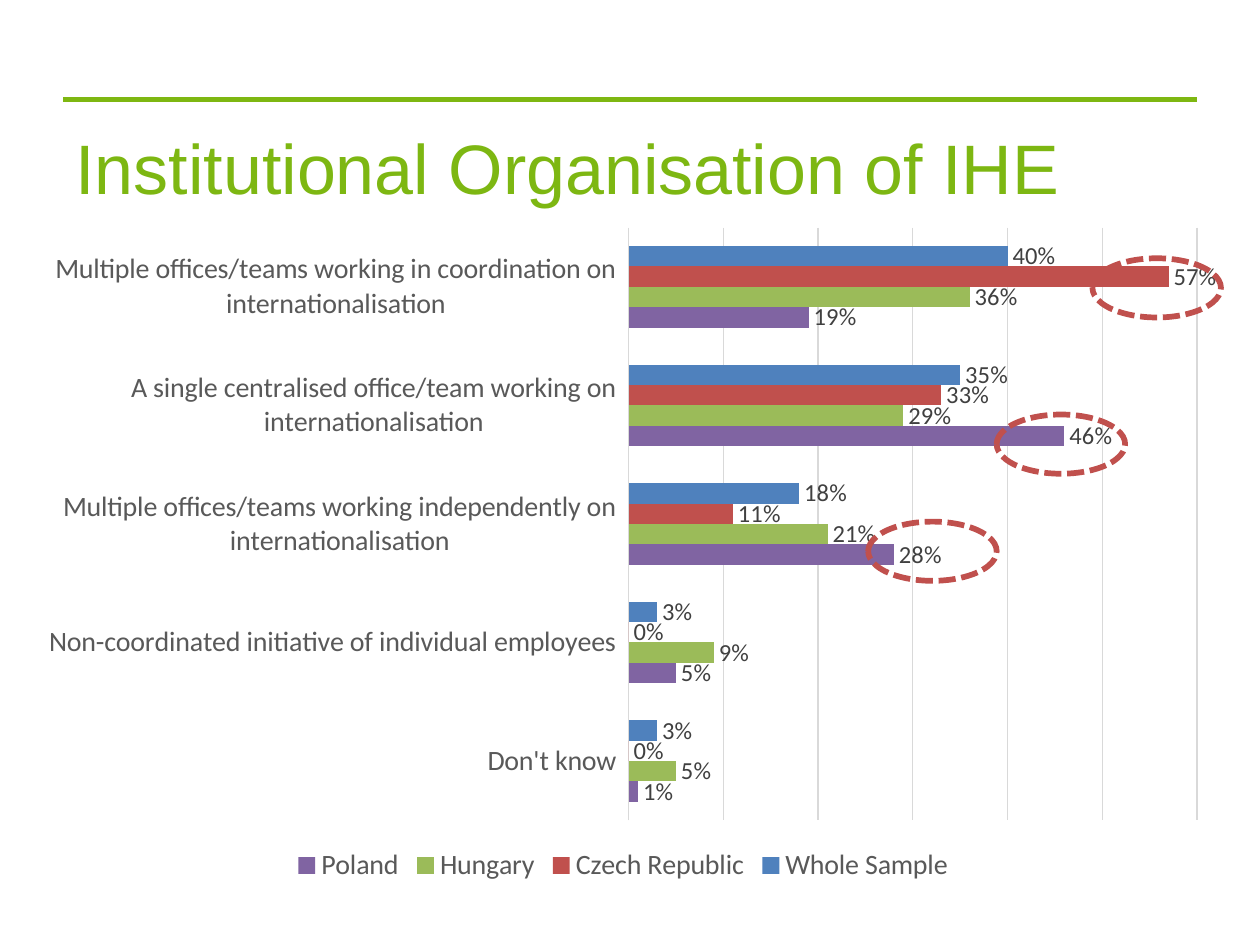
from dataclasses import dataclass

from pptx import Presentation
from pptx.chart.data import CategoryChartData
from pptx.dml.color import RGBColor
from pptx.enum.chart import XL_CHART_TYPE as ChartType
from pptx.enum.chart import XL_LABEL_POSITION as LabelPos
from pptx.enum.chart import XL_LEGEND_POSITION as LegendPos
from pptx.enum.chart import XL_TICK_LABEL_POSITION as TickLabelPos
from pptx.enum.chart import XL_TICK_MARK as TickMark
from pptx.enum.dml import MSO_LINE_DASH_STYLE as Dash
from pptx.enum.shapes import MSO_CONNECTOR as Connector
from pptx.enum.shapes import MSO_SHAPE as Shape
from pptx.enum.text import MSO_ANCHOR as Anchor
from pptx.enum.text import MSO_AUTO_SIZE as AutoSize
from pptx.enum.text import PP_ALIGN as Align
from pptx.oxml import parse_xml
from pptx.oxml.ns import nsdecls
from pptx.util import Inches, Pt


@dataclass(frozen=True)
class Theme:
    title_font: str = "Arial"
    chart_font: str = "Calibri"
    title_size: int = 40
    axis_size: int = 16
    label_size: int = 14
    base_size: int = 10
    rule: str = "7EB711"
    title: str = "7DB712"
    axis_text: str = "595959"
    label_text: str = "404040"
    base_text: str = "000000"
    grid: str = "D9D9D9"
    highlight: str = "C0504D"


@dataclass(frozen=True)
class Country:
    name: str
    values: tuple[float, ...]
    color: str


@dataclass(frozen=True)
class Highlight:
    left: float
    top: float
    width: float = 1.02
    height: float = 0.47


THEME = Theme()

CATEGORIES = (
    "Multiple offices/teams working in coordination on internationalisation",
    "A single centralised office/team working on internationalisation",
    "Multiple offices/teams working independently on internationalisation",
    "Non-coordinated initiative of individual employees",
    "Don't know",
)

COUNTRIES = (
    Country("Whole Sample", (0.40, 0.35, 0.18, 0.03, 0.03), "4F81BD"),
    Country("Czech Republic", (0.57, 0.33, 0.11, 0, 0), "C0504D"),
    Country("Hungary", (0.36, 0.29, 0.21, 0.09, 0.05), "9BBB59"),
    Country("Poland", (0.19, 0.46, 0.28, 0.05, 0.01), "8064A2"),
)

HIGHLIGHTS = (Highlight(8.67, 2.05), Highlight(7.91, 3.29), Highlight(6.89, 4.14))


def rgb(color: str) -> RGBColor:
    return RGBColor.from_string(color)


def set_font(font, name: str, size: int, color: str) -> None:
    font.name = name
    font.size = Pt(size)
    font.bold = False
    font.color.rgb = rgb(color)


def set_line(line, color: str, width: float) -> None:
    line.color.rgb = rgb(color)
    line.width = Pt(width)


def add_rule(slide) -> None:
    s = slide.shapes.add_connector(
        Connector.STRAIGHT, Inches(0.5), Inches(0.79), Inches(9.5), Inches(0.79)
    )
    set_line(s.line, THEME.rule, 2.75)
    s._element.spPr.append(parse_xml(f"<a:effectLst {nsdecls('a')}/>"))


def set_title(slide, text: str) -> None:
    s = slide.shapes.title
    s.left, s.top, s.width, s.height = map(Inches, (0.5, 0.92, 9, 1.42))
    tf = s.text_frame
    tf.text = text
    tf.auto_size = AutoSize.NONE
    tf.vertical_anchor = Anchor.TOP
    tf.margin_top = Inches(0.07)
    p = tf.paragraphs[0]
    p.alignment = Align.LEFT
    set_font(p.font, THEME.title_font, THEME.title_size, THEME.title)


def format_axes(chart) -> None:
    cat = chart.category_axis
    cat.reverse_order = True
    cat.major_tick_mark = cat.minor_tick_mark = TickMark.NONE
    cat.tick_label_position = TickLabelPos.LOW
    set_font(cat.tick_labels.font, THEME.chart_font, THEME.axis_size, THEME.axis_text)
    set_line(cat.format.line, THEME.grid, 0.75)

    val = chart.value_axis
    val.visible = False
    val.minimum_scale, val.maximum_scale, val.major_unit = 0, 0.6, 0.1
    val.has_major_gridlines = True
    set_line(val.major_gridlines.format.line, THEME.grid, 0.75)


def add_chart(slide, countries: tuple[Country, ...]) -> None:
    data = CategoryChartData(number_format="0%")
    data.categories = CATEGORIES
    for country in countries:
        data.add_series(country.name, country.values)
    chart = slide.shapes.add_chart(
        ChartType.BAR_CLUSTERED,
        Inches(0.2), Inches(1.7), Inches(9.49), Inches(5.35), data,
    ).chart
    chart.has_title = False
    set_font(chart.font, THEME.chart_font, THEME.base_size, THEME.base_text)
    format_axes(chart)

    chart.has_legend = True
    chart.legend.position = LegendPos.BOTTOM
    chart.legend.include_in_layout = False
    set_font(chart.legend.font, THEME.chart_font, THEME.axis_size, THEME.axis_text)

    plot = chart.plots[0]
    plot.gap_width = 182
    plot.overlap = 0
    plot.vary_by_categories = False
    for series, country in zip(plot.series, countries):
        series.format.fill.solid()
        series.format.fill.fore_color.rgb = rgb(country.color)
        labels = series.data_labels
        labels.show_value = True
        labels.number_format = "0%"
        labels.number_format_is_linked = False
        labels.position = LabelPos.OUTSIDE_END
        set_font(labels.font, THEME.chart_font, THEME.label_size, THEME.label_text)


def add_highlight(slide, mark: Highlight) -> None:
    s = slide.shapes.add_shape(
        Shape.OVAL,
        Inches(mark.left), Inches(mark.top), Inches(mark.width), Inches(mark.height),
    )
    s.shadow.inherit = False
    s.fill.background()
    set_line(s.line, THEME.highlight, 3.25)
    s.line.dash_style = Dash.SQUARE_DOT


def main() -> None:
    prs = Presentation()
    prs.slide_width, prs.slide_height = Inches(10), Inches(7.5)
    slide = prs.slides.add_slide(prs.slide_layouts[5])
    add_rule(slide)
    set_title(slide, "Institutional Organisation of IHE")
    add_chart(slide, COUNTRIES)
    for mark in HIGHLIGHTS:
        add_highlight(slide, mark)
    prs.save("out.pptx")


if __name__ == "__main__":
    main()
